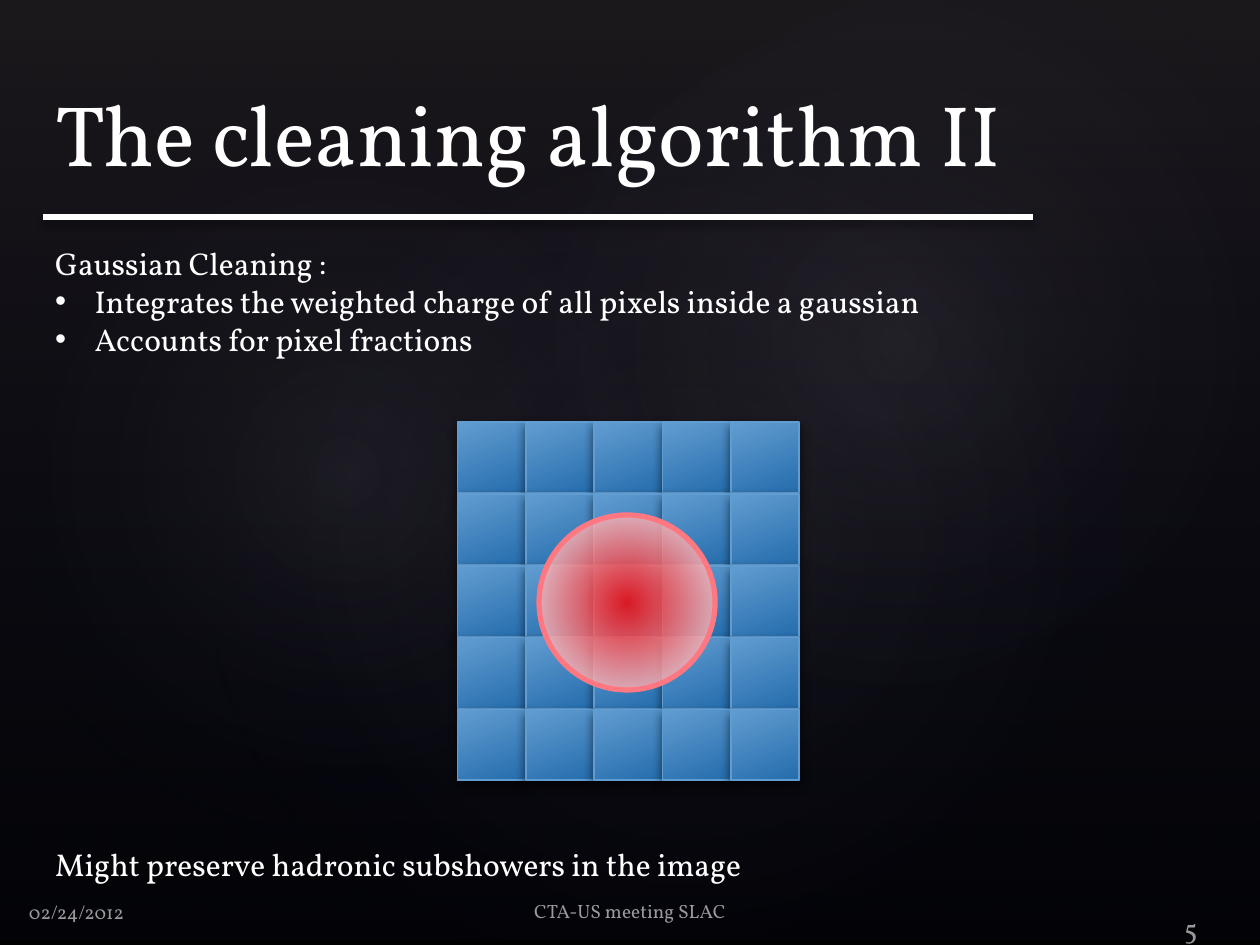
"""Build the slide on the cleaning algorithm."""
from dataclasses import dataclass

import pptx
import pptx.dml.color
import pptx.enum.shapes
import pptx.enum.text
import pptx.oxml
import pptx.oxml.ns
import pptx.util

Pt = pptx.util.Pt
RGB = pptx.dml.color.RGBColor.from_string
qn = pptx.oxml.ns.qn
Kind = pptx.enum.shapes.MSO_SHAPE
Align = pptx.enum.text.PP_ALIGN
Anchor = pptx.enum.text.MSO_ANCHOR
Fit = pptx.enum.text.MSO_AUTO_SIZE
SPACE = 'xmlns:a="http://schemas.openxmlformats.org/drawingml/2006/main"'
ROUND = ('<a:path path="circle"><a:fillToRect l="50000" t="50000" '
         'r="50000" b="50000"/></a:path>')


@dataclass(frozen=True)
class Theme:
    """Colours, type sizes and the font."""
    font: str = "Vollkorn"
    ground: str = "000000"
    ink: str = "FFFFFF"
    haze: str = "504652"
    navy: str = "242852"
    glow: str = "C4BCC6"
    light: str = "629DD1"
    deep: str = "256DAD"
    core: str = "FF0000"
    ring: str = "FF7780"
    title: int = 49
    body: int = 18
    page: int = 16
    foot: int = 11
    faint: int = 60


THEME = Theme()


def make(tag, inner="", **attrs):
    """Return one drawing element."""
    pairs = " ".join(f'{key}="{val}"' for key, val in attrs.items())
    return pptx.oxml.parse_xml(f"<a:{tag} {SPACE} {pairs}>{inner}</a:{tag}>")


def shade(shape, stops, angle=None):
    """Fill a shape with a linear gradient, or a round one without an angle."""
    marks = "".join(
        f'<a:gs pos="{pos * 1000}"><a:srgbClr val="{tint}">'
        f'<a:alpha val="{alpha * 1000}"/></a:srgbClr></a:gs>'
        for pos, tint, alpha in stops)
    way = ROUND if angle is None else f'<a:lin ang="{angle * 60000}" scaled="0"/>'
    fill = make("gradFill", f"<a:gsLst>{marks}</a:gsLst>{way}", rotWithShape=1)
    shape._element.spPr.insert(2, fill)


def drop(shape, alpha, blur):
    """Give a shape a black shadow that falls straight down."""
    tint = f'<a:srgbClr val="{THEME.ground}"><a:alpha val="{alpha * 1000}"/></a:srgbClr>'
    cast = (f'<a:outerShdw blurRad="{Pt(blur)}" dist="{Pt(3)}" dir="5400000" '
            f'rotWithShape="0">{tint}</a:outerShdw>')
    props = shape._element.spPr
    for old in props.findall(qn("a:effectLst")):
        props.remove(old)
    props.append(make("effectLst", cast))


def form(shapes, kind, box, stops, angle=None, turn=0, line=None, width=1):
    """Add a shape with a gradient fill."""
    shape = shapes.add_shape(kind, *map(Pt, box))
    shape.rotation = turn
    shade(shape, stops, angle)
    if line:
        shape.line.color.rgb = RGB(line)
        shape.line.width = Pt(width)
    else:
        shape.line.fill.background()
    shape.shadow.inherit = False
    return shape


def style(para, size, alpha):
    """Set the font, size and colour of each run."""
    for run in para.runs:
        run.font.name = THEME.font
        run.font.size = Pt(size)
        run.font.color.rgb = RGB(THEME.ink)
        if alpha < 100:
            tint = run._r.rPr.find(".//" + qn("a:srgbClr"))
            tint.append(make("alpha", val=alpha * 1000))


def write(slide, box, lines, size, alpha=100, align=Align.LEFT,
          anchor=Anchor.TOP, grow=False, dots=False):
    """Add a text box, with bullets after its first line if asked."""
    frame = slide.shapes.add_textbox(*map(Pt, box)).text_frame
    frame.text = "\n".join(lines)
    frame.word_wrap = not grow
    frame.auto_size = Fit.SHAPE_TO_FIT_TEXT if grow else Fit.NONE
    frame.vertical_anchor = anchor
    for num, para in enumerate(frame.paragraphs):
        para.alignment = align
        if dots and num:
            props = para._p.get_or_add_pPr()
            props.set("marL", str(Pt(22.5)))
            props.set("indent", str(Pt(-22.5)))
            props.append(make("buFont", typeface="Arial"))
            props.append(make("buChar", char="•"))
        style(para, size, alpha)
    return frame


def scene(slide):
    """Paint the dark ground with its soft glows."""
    slide.background.fill.solid()
    slide.background.fill.fore_color.rgb = RGB(THEME.ground)
    form(slide.shapes, Kind.RECTANGLE, (0, -3, 720, 540),
         [(0, THEME.haze, 36), (100, THEME.navy, 10)], 90)
    for box, turn, alpha in (((108, 82, 570, 449), 328.7, 7),
                             ((-21.6, 93.6, 436, 353), 294.3, 8),
                             ((257.8, 9.4, 510.5, 374.4), 328.7, 8)):
        form(slide.shapes, Kind.OVAL, box,
             [(0, THEME.glow, alpha), (58, THEME.navy, 0)], turn=turn)


def rule(slide):
    """Draw the line under the title."""
    kind = pptx.enum.shapes.MSO_CONNECTOR.STRAIGHT
    line = slide.shapes.add_connector(kind, Pt(24.5), Pt(124), Pt(590.5), Pt(124))
    line.line.color.rgb = RGB(THEME.ink)
    line.line.width = Pt(3)
    drop(line, 40, 4)


def grid(slide, count=5):
    """Draw the camera pixels as one group."""
    group = slide.shapes.add_group_shape()
    for row in range(count):
        for col in range(count):
            box = (261.4 + 39.05 * col, 241.2 + 41.05 * row, 39.05, 40.5)
            cell = form(group.shapes, Kind.RECTANGLE, box,
                        [(0, THEME.light, 100), (100, THEME.deep, 100)],
                        69, line=THEME.light)
            drop(cell, 60, 6)


def main():
    """Build and save the slide."""
    deck = pptx.Presentation()
    deck.slide_width, deck.slide_height = Pt(720), Pt(540)
    slide = deck.slides.add_slide(deck.slide_layouts[6])
    scene(slide)
    rule(slide)
    write(slide, (24.5, 36.7, 592, 72), ["The cleaning algorithm II"],
          THEME.title, anchor=Anchor.BOTTOM)
    write(slide, (24.5, 136, 523.5, 72.7),
          ["Gaussian Cleaning :",
           "Integrates the weighted charge of all pixels inside a gaussian",
           "Accounts for pixel fractions"],
          THEME.body, grow=True, dots=True)
    write(slide, (-90, 511, 168, 29), ["02/24/2012"], THEME.foot,
          THEME.faint, Align.RIGHT)
    write(slide, (180, 510.5, 360, 29), ["CTA-US meeting SLAC"], THEME.foot,
          THEME.faint, Align.CENTER)
    page = write(slide, (669.6, 511, 168, 30), ["5"], THEME.page,
                 THEME.faint, anchor=Anchor.BOTTOM)
    page.margin_bottom = Pt(0.7)
    grid(slide)
    form(slide.shapes, Kind.OVAL, (308, 294.3, 100.6, 100),
         [(0, THEME.core, 80), (100, THEME.ink, 80)],
         line=THEME.ring, width=3)
    write(slide, (24.5, 479.5, 417.6, 29),
          ["Might preserve hadronic subshowers in the image"],
          THEME.body, grow=True)
    deck.save("out.pptx")


if __name__ == "__main__":
    main()
